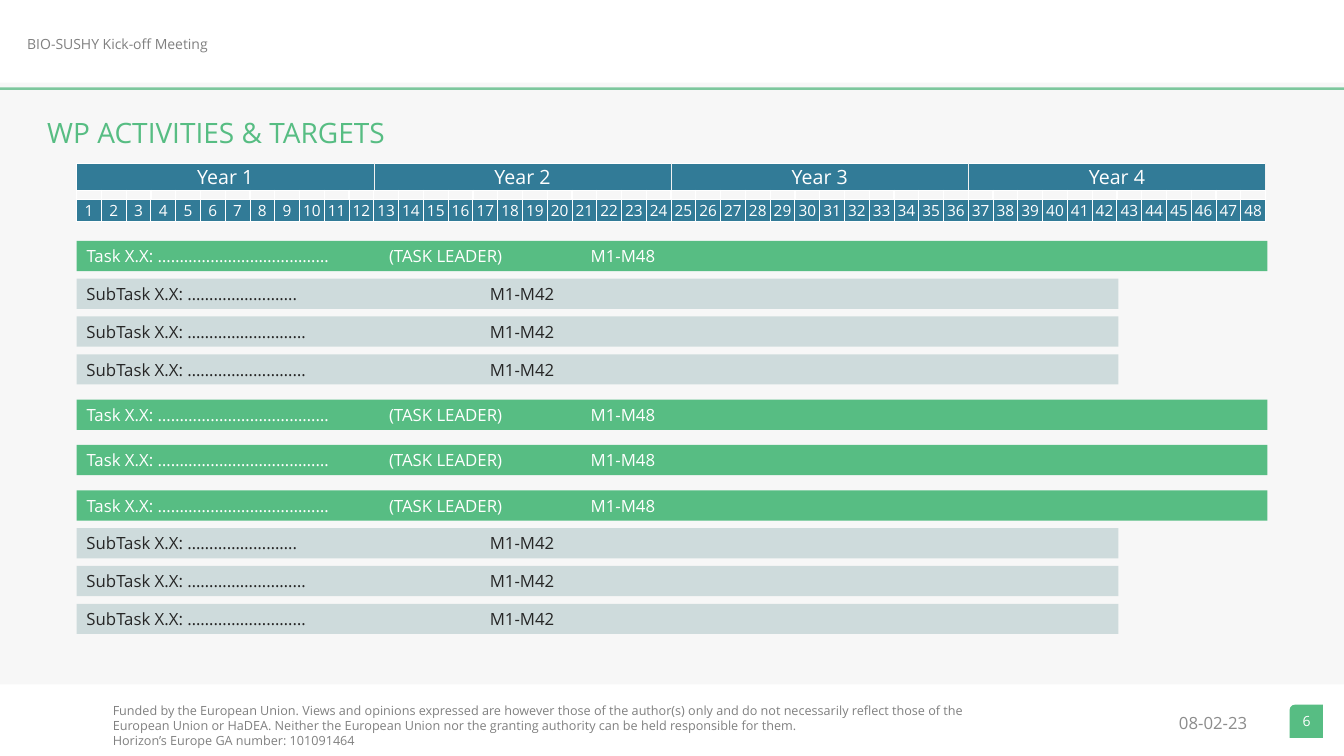
from lxml.etree import SubElement
from pptx import Presentation
from pptx.dml.color import RGBColor
from pptx.enum.shapes import MSO_CONNECTOR, MSO_SHAPE
from pptx.enum.text import MSO_ANCHOR, PP_ALIGN
from pptx.oxml.ns import qn
from pptx.util import Inches, Pt

WIDE, HIGH = 13.33, 7.5
FACE = "Open Sans"
GREEN, BLUE, TEAL = "57BD83", "327B97", "2B6F72"
WHITE, GREY, PALE, INK = "FFFFFF", "808080", "F2F2F2", "262626"
MONTHS, YEARS = 48, 4
SPAN = MONTHS // YEARS

TASK = "Task X.X: …………………………………\t(TASK LEADER)\tM1-M48"
FIRST = "SubTask X.X: …………………….\tM1-M42"
OTHER = "SubTask X.X: ………………………\tM1-M42"
PLAN = [TASK, FIRST, OTHER, OTHER, TASK, TASK, TASK, FIRST, OTHER, OTHER]
FUNDING = (
    "Funded by the European Union. Views and opinions expressed are however "
    "those of the author(s) only and do not necessarily reflect those of the "
    "European Union or HaDEA. Neither the European Union nor the granting "
    "authority can be held responsible for them.\n"
    "Horizon’s Europe GA number: 101091464"
)


def paint(form, shade, alpha=None):
    """Give a fill a solid colour, with its opacity in percent."""
    form.solid()
    form.fore_color.rgb = RGBColor.from_string(shade)
    if alpha:
        tint = form.fore_color._xFill.find(qn("a:srgbClr"))
        SubElement(tint, qn("a:alpha"), val=str(alpha * 1000))


def write(frame, words, size, shade, align=PP_ALIGN.LEFT,
          anchor=MSO_ANCHOR.TOP, tabs=()):
    frame.word_wrap = True
    frame.vertical_anchor = anchor
    para = frame.paragraphs[0]
    para.text = words
    para.alignment = align
    if tabs:
        stops = SubElement(para._p.get_or_add_pPr(), qn("a:tabLst"))
        for stop in tabs:
            SubElement(stops, qn("a:tab"), pos=str(Inches(stop)), algn="l")
    for run in para.runs:
        run.font.name = FACE
        run.font.size = Pt(size)
        run.font.color.rgb = RGBColor.from_string(shade)


def label(slide, box, words, size, shade, **form):
    frame = slide.shapes.add_textbox(*map(Inches, box)).text_frame
    write(frame, words, size, shade, **form)


def block(slide, box, shade, alpha=None, kind=MSO_SHAPE.RECTANGLE):
    shape = slide.shapes.add_shape(kind, *map(Inches, box))
    shape.shadow.inherit = False
    shape.line.fill.background()
    paint(shape.fill, shade, alpha)
    return shape


def edge(cell, sides, shade, width):
    """Draw the named sides (L, R, T, B) of a cell, ahead of its fill."""
    props = cell._tc.get_or_add_tcPr()
    for spot, side in enumerate(sides):
        line = SubElement(props, qn("a:ln" + side), w=str(Pt(width)))
        fill = SubElement(line, qn("a:solidFill"))
        SubElement(fill, qn("a:srgbClr"), val=shade)
        props.insert(spot, line)


def header(slide, box):
    x, y, w, h = box
    title = block(slide, (x, y + 0.3, 3.81, 0.27), WHITE)
    title.text_frame.margin_left = Inches(0.27)
    write(title.text_frame, "BIO-SUSHY Kick-off Meeting", 10, GREY)
    rule = slide.shapes.add_connector(
        MSO_CONNECTOR.STRAIGHT, *map(Inches, (x, y + h, x + w, y + h)))
    rule.line.width = Pt(1.75)
    paint(rule.line.fill, GREEN, 89)
    SubElement(rule._element.spPr, qn("a:effectLst"))


def footer(slide, box):
    x, y, w, h = box
    label(slide, (x + 1.02, y + 0.13, 8.95, 0.56), FUNDING, 9, GREY)
    label(slide, (x + 9.52, y + 0.23, 2.95, 0.3), "08-02-23", 12, "8C8C8C",
          align=PP_ALIGN.RIGHT, anchor=MSO_ANCHOR.MIDDLE)
    tile = block(slide, (x + 12.79, y + 0.2, 0.33, 0.33), GREEN,
                 kind=MSO_SHAPE.ROUND_1_RECTANGLE)
    tile.rotation = 270
    label(slide, (x + 12.79, y + 0.23, 0.34, 0.27), "6", 10, WHITE,
          align=PP_ALIGN.CENTER)


def scale(slide, box):
    """Lay out the years above the months, with a thin gap between."""
    x, y, w, h = box
    frame = slide.shapes.add_table(3, MONTHS, *map(Inches, box))
    table = frame.table
    table.first_row = table.horz_banding = False
    for col in table.columns:
        col.width = Inches(w / MONTHS)
    for row, tall in zip(table.rows, (0.27, 0.09, 0.22)):
        row.height = Inches(tall)
        for cell in row.cells:
            cell.margin_left = cell.margin_right = Inches(0.01)
            cell.margin_top = cell.margin_bottom = 0
            cell.fill.background()
            SubElement(cell.text_frame.paragraphs[0]._p,
                       qn("a:endParaRPr"), sz="100")

    def fill(cell, words, size):
        paint(cell.fill, BLUE)
        cell.vertical_anchor = MSO_ANCHOR.MIDDLE
        write(cell.text_frame, words, size, WHITE, align=PP_ALIGN.CENTER,
              anchor=None)

    for year in range(YEARS):
        start, end = year * SPAN, (year + 1) * SPAN - 1
        cell = table.cell(0, start)
        cell.merge(table.cell(0, end))
        fill(cell, f"Year {year + 1}", 14)
        edge(cell, "LR" if year else "R", PALE, 0.5)
        edge(table.cell(0, end), "R", PALE, 0.5)
    for month in range(MONTHS):
        cell = table.cell(2, month)
        fill(cell, str(month + 1), 11)
        edge(cell, "LRTB", WHITE, 0.75)


def chart(slide, box):
    """Stack the task bars; each is as long as its months."""
    x, y, w, h = box
    for spot, words in enumerate(PLAN):
        main = words == TASK
        if spot:
            y += 0.45 if main else 0.375
        size = (w if main else w * 42 / MONTHS, 0.3)
        bar = block(slide, (x, y, *size), GREEN if main else TEAL,
                    None if main else 20)
        write(bar.text_frame, words, 12, WHITE if main else INK,
              anchor=MSO_ANCHOR.MIDDLE, tabs=(3, 5) if main else (4,))


def main():
    deck = Presentation()
    deck.slide_width, deck.slide_height = Inches(WIDE), Inches(HIGH)
    slide = deck.slides.add_slide(deck.slide_layouts[6])
    header(slide, (0, 0, WIDE, 0.88))
    block(slide, (0, 0.82, WIDE, 5.97), "D9D9D9", 20)
    footer(slide, (0, 6.79, WIDE, HIGH - 6.79))
    label(slide, (0.37, 1.1, 5.17, 0.44), "WP ACTIVITIES & TARGETS", 20, GREEN)
    chart(slide, (0.76, 2.39, 11.81, 3.91))
    scale(slide, (0.76, 1.62, 11.81, 0.58))
    deck.save("out.pptx")


if __name__ == "__main__":
    main()
